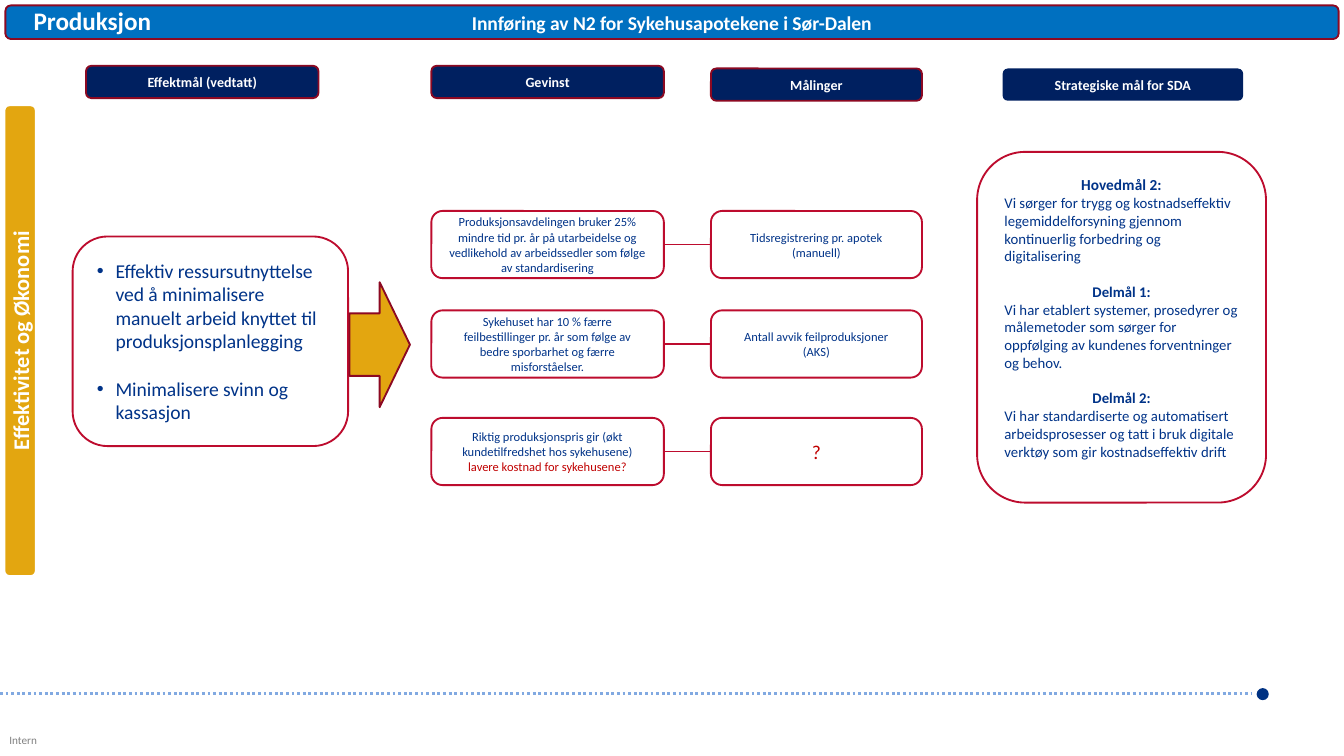
from dataclasses import dataclass
from typing import Optional

from lxml.etree import SubElement
from pptx import Presentation
from pptx.dml.color import RGBColor
from pptx.enum.dml import MSO_LINE
from pptx.enum.shapes import MSO_CONNECTOR, MSO_SHAPE
from pptx.enum.text import MSO_ANCHOR, MSO_AUTO_SIZE, PP_ALIGN
from pptx.oxml.ns import qn
from pptx.util import Inches, Pt

COLORS = {
    "banner": "0070C0", "header": "002060", "gold": "E3A610", "white": "FFFFFF",
    "dark_red": "8C0922", "red": "BD0C2E", "question": "C00000",
    "text": "003388", "dot": "003283", "dotted": "81A9E1", "grey": "808080",
}
FONT = "Calibri"
ROUNDED = MSO_SHAPE.FLOWCHART_ALTERNATE_PROCESS
BENEFIT_LEFT, BENEFIT_WIDTH = 3.21, 1.73
MEASURE_LEFT, MEASURE_WIDTH = 5.29, 1.57
ROW_HEIGHT = 0.5


@dataclass
class Box:
    left: float
    top: float
    width: float
    height: float
    text: str = ""
    size: float = 6.75
    color: str = "text"
    bold: bool = False
    fill: str = "white"
    line: Optional[str] = "red"
    line_width: float = 1
    geometry: MSO_SHAPE = ROUNDED


@dataclass
class Row:
    top: float
    benefit: str
    measure: str
    question: str = ""


@dataclass
class Goal:
    heading: str
    description: str


HEADERS = [
    Box(left, top, width, 0.24, text, 7.5, "white", True, "header", line)
    for left, top, width, text, line in [
        (0.64, 0.49, 1.73, "Effektmål (vedtatt)", "dark_red"),
        (BENEFIT_LEFT, 0.49, BENEFIT_WIDTH, "Gevinst", "dark_red"),
        (MEASURE_LEFT, 0.51, MEASURE_WIDTH, "Målinger", "dark_red"),
        (7.46, 0.51, 1.79, "Strategiske mål for SDA", None),
    ]
]
ROWS = [
    Row(1.57, "Produksjonsavdelingen bruker 25% mindre tid pr. år på utarbeidelse og "
        "vedlikehold av arbeidssedler som følge av standardisering",
        "Tidsregistrering pr. apotek\v(manuell)"),
    Row(2.31, "Sykehuset har 10 % færre feilbestillinger pr. år som følge av bedre "
        "sporbarhet og færre misforståelser.",
        "Antall avvik feilproduksjoner\n(AKS)"),
    Row(3.11, "Riktig produksjonspris gir (økt kundetilfredshet hos sykehusene) ",
        "?", "lavere kostnad for sykehusene?"),
]
EFFECTS = [
    "Effektiv ressursutnyttelse ved å minimalisere manuelt arbeid knyttet til "
    "produksjonsplanlegging",
    "Minimalisere svinn og kassasjon",
]
GOALS = [
    Goal("Hovedmål 2:", "Vi sørger for trygg og kostnadseffektiv legemiddelforsyning "
         "gjennom kontinuerlig forbedring og digitalisering"),
    Goal("Delmål 1:", "Vi har etablert systemer, prosedyrer og målemetoder som sørger for "
         "oppfølging av kundenes forventninger og behov."),
    Goal("Delmål 2:", "Vi har standardiserte og automatisert arbeidsprosesser og tatt i "
         "bruk digitale verktøy som gir kostnadseffektiv drift"),
]


def rgb(name: str) -> RGBColor:
    return RGBColor.from_string(COLORS[name])


def format_runs(paragraph, size: float, color: str, bold: bool = False) -> None:
    for run in paragraph.runs:
        run.font.name = FONT
        run.font.size = Pt(size)
        run.font.bold = bold
        run.font.color.rgb = rgb(color)


def add_box(slide, box: Box):
    shape = slide.shapes.add_shape(
        box.geometry, Inches(box.left), Inches(box.top), Inches(box.width), Inches(box.height))
    shape.shadow.inherit = False
    shape.fill.solid()
    shape.fill.fore_color.rgb = rgb(box.fill)
    if box.line:
        shape.line.color.rgb = rgb(box.line)
        shape.line.width = Pt(box.line_width)
    else:
        shape.line.fill.background()
    frame = shape.text_frame
    frame.word_wrap = True
    frame.vertical_anchor = MSO_ANCHOR.MIDDLE
    if box.text:
        frame.text = box.text
        for paragraph in frame.paragraphs:
            paragraph.alignment = PP_ALIGN.CENTER
            format_runs(paragraph, box.size, box.color, box.bold)
    return shape


def add_line(slide, start: float, end: float, y: float, color: str, width: float = 1):
    """Draw a horizontal line without a shadow."""
    line = slide.shapes.add_connector(
        MSO_CONNECTOR.STRAIGHT, Inches(start), Inches(y), Inches(end), Inches(y))
    line.line.color.rgb = rgb(color)
    line.line.width = Pt(width)
    SubElement(line._element.spPr, qn("a:effectLst"))
    return line


def place_placeholder(slide, placeholder, left: float, top: float, width: float,
                      height: float, anchor: MSO_ANCHOR) -> None:
    """Move a placeholder into position and in front of the shapes drawn so far."""
    placeholder.left, placeholder.top = Inches(left), Inches(top)
    placeholder.width, placeholder.height = Inches(width), Inches(height)
    frame = placeholder.text_frame
    frame.word_wrap = True
    frame.auto_size = MSO_AUTO_SIZE.NONE
    frame.vertical_anchor = anchor
    slide.shapes._spTree.append(placeholder._element)


def add_footer(slide) -> None:
    add_line(slide, 0, 9.31, 5.16, "dotted", 1.5).line.dash_style = MSO_LINE.ROUND_DOT
    add_box(slide, Box(9.35, 5.12, 0.09, 0.09, fill="dot", line=None, geometry=MSO_SHAPE.OVAL))
    label = slide.shapes.add_textbox(Inches(0.07), Inches(5.46), Inches(0.23), Inches(0.1))
    frame = label.text_frame
    frame.margin_left = frame.margin_right = frame.margin_top = frame.margin_bottom = 0
    frame.text = "Intern"
    format_runs(frame.paragraphs[0], 6, "grey")


def add_row(slide, row: Row) -> None:
    add_line(slide, BENEFIT_LEFT + BENEFIT_WIDTH, MEASURE_LEFT, row.top + ROW_HEIGHT / 2, "red")
    benefit = add_box(
        slide, Box(BENEFIT_LEFT, row.top, BENEFIT_WIDTH, ROW_HEIGHT, row.benefit))
    measure = Box(MEASURE_LEFT, row.top, MEASURE_WIDTH, ROW_HEIGHT, row.measure)
    if row.question:
        run = benefit.text_frame.paragraphs[0].add_run()
        run.text = row.question
        run.font.name = FONT
        run.font.size = Pt(6.75)
        run.font.color.rgb = rgb("question")
        measure.size, measure.color = 10.5, "question"
    add_box(slide, measure)


def add_effects(slide, body) -> None:
    box = Box(0.54, 1.76, 2.05, 1.56)
    add_box(slide, box)
    place_placeholder(slide, body, box.left, box.top, box.width, box.height, MSO_ANCHOR.MIDDLE)
    frame = body.text_frame
    frame.margin_left = frame.margin_right = Inches(0.18)
    frame.text = "\n".join(EFFECTS)
    for index, paragraph in enumerate(frame.paragraphs):
        properties = paragraph._p.get_or_add_pPr()
        properties.set("marL", str(Inches(0.14)))
        properties.set("indent", str(-Inches(0.14)))
        SubElement(properties, qn("a:buChar"), char="•")
        paragraph.space_before = Pt(12.8 if index else 0)
        format_runs(paragraph, 10.5, "text")


def add_goals(slide) -> None:
    frame = add_box(slide, Box(7.27, 1.13, 2.15, 2.61)).text_frame
    frame.margin_bottom = Inches(0.19)
    frame.text = "\n".join(f"{goal.heading}\n{goal.description}" for goal in GOALS)
    for index, paragraph in enumerate(frame.paragraphs):
        is_heading = index % 2 == 0
        paragraph.alignment = PP_ALIGN.CENTER if is_heading else PP_ALIGN.LEFT
        paragraph.space_before = Pt(9.6 if is_heading and index else 0)
        format_runs(paragraph, 7.9 if index else 8.25, "text", is_heading)


def main() -> None:
    presentation = Presentation()
    presentation.slide_width = Inches(10)
    presentation.slide_height = presentation.slide_width * 9 // 16
    slide = presentation.slides.add_slide(presentation.slide_layouts[1])
    title, body = slide.placeholders

    add_footer(slide)
    add_box(slide, Box(0.04, 0.04, 9.92, 0.25, "Innføring av N2 for Sykehusapotekene i Sør-Dalen",
                       10.5, "white", True, "banner", "dark_red"))
    place_placeholder(slide, title, 0.15, -0.01, 2.49, 0.33, MSO_ANCHOR.TOP)
    title.text_frame.text = "Produksjon"
    title.text_frame.paragraphs[0].alignment = PP_ALIGN.LEFT
    format_runs(title.text_frame.paragraphs[0], 13.5, "white", True)

    category = add_box(slide, Box(0.03, 0.78, 0.24, 3.51, "Effektivitet og Økonomi",
                                  12, "white", True, "gold", "white", 1.5))
    category.text_frame._txBody.bodyPr.set("vert", "vert270")
    for header in HEADERS:
        add_box(slide, header)
    for row in ROWS:
        add_row(slide, row)
    add_effects(slide, body)
    add_goals(slide)
    add_box(slide, Box(2.6, 2.1, 0.45, 0.93, fill="gold", line="dark_red",
                       geometry=MSO_SHAPE.RIGHT_ARROW))
    presentation.save("out.pptx")


if __name__ == "__main__":
    main()
